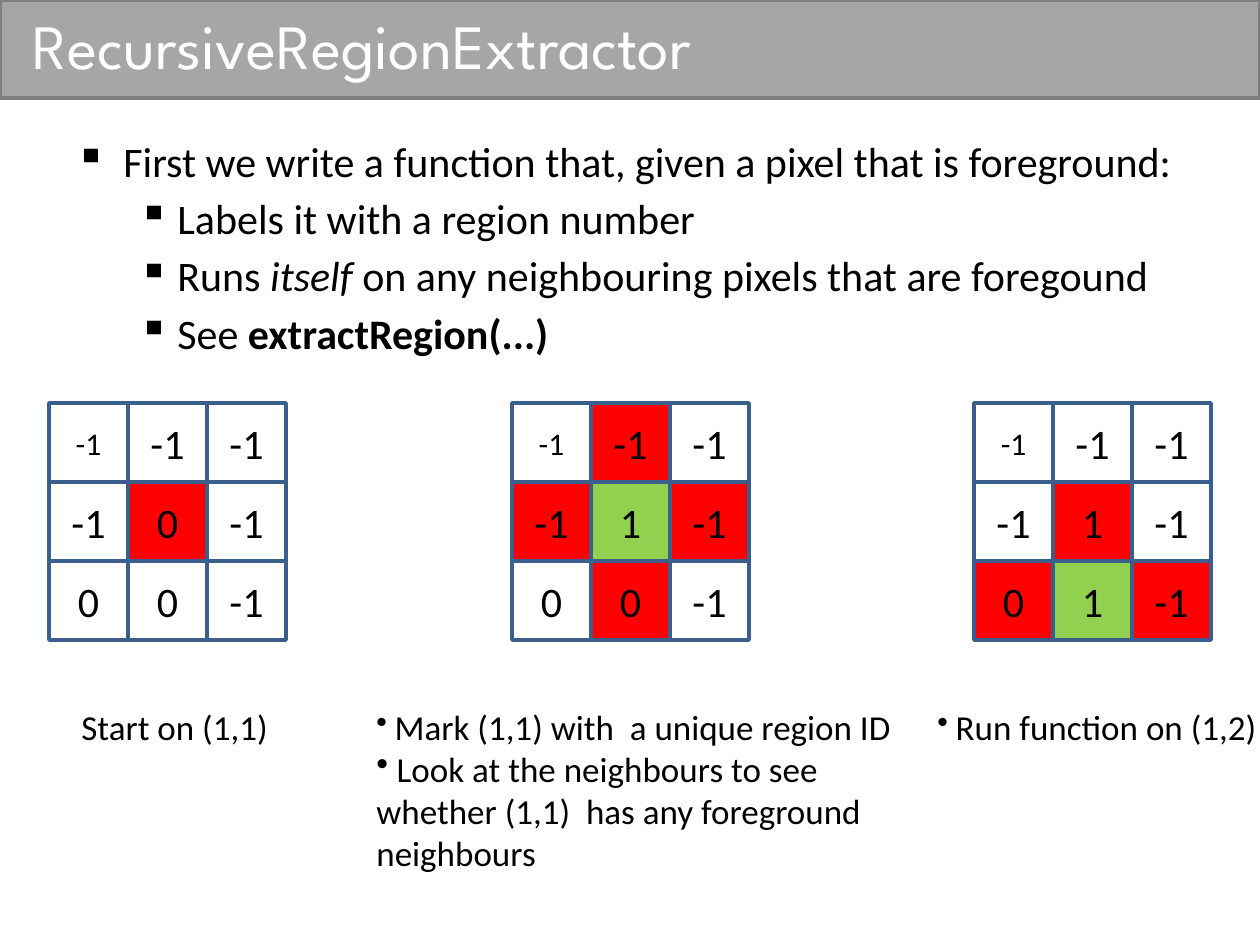
from dataclasses import dataclass

from lxml.etree import SubElement
from pptx import Presentation
from pptx.dml.color import RGBColor
from pptx.enum.shapes import MSO_SHAPE as Shape
from pptx.enum.text import MSO_ANCHOR as Anchor, PP_ALIGN as Align
from pptx.oxml.ns import qn
from pptx.util import Emu, Pt

PX = 914400 / 126
COLORS = {
    "bar": "A6A6A6", "bar_line": "808080", "title": "FFFFFF", "text": "000000",
    "cell_line": "3A5F8C", "R": "FF0000", "G": "92D050",
}
CELL = 79
GRID_TOP = 403
CAPTION_TOP = 699


@dataclass
class Span:
    text: str
    size: int = 0
    bold: bool = False
    italic: bool = False


@dataclass
class Line:
    spans: list[Span]
    bullet: str = ""
    level: int = 0
    margin: int = 0
    hang: int = 0
    before: float = 0


@dataclass
class Grid:
    """Nine pixel values and their marks: R red, G green, . unfilled."""
    left: int
    values: str
    marks: str


@dataclass
class Caption:
    left: int
    width: int
    height: int
    size: int
    lines: list[Line]
    wrap: bool = True


def px(*lengths: int) -> list[Emu]:
    return [Emu(round(length * PX)) for length in lengths]


def color(name: str) -> RGBColor:
    return RGBColor.from_string(COLORS[name])


def set_font(para, size: int, name: str = "Calibri", shade: str = "text") -> None:
    para.font.size = Pt(size)
    para.font.name = name
    para.font.color.rgb = color(shade)


def add_rect(page, area: tuple, line: str, fill: str = ""):
    rect = page.shapes.add_shape(Shape.RECTANGLE, *px(*area))
    rect.shadow.inherit = False
    if fill:
        rect.fill.solid()
        rect.fill.fore_color.rgb = color(fill)
    else:
        rect.fill.background()
    rect.line.color.rgb = color(line)
    rect.line.width = Pt(2)
    return rect


def add_title(page, text: str) -> None:
    title = page.shapes.title
    title.left, title.top, title.width, title.height = px(20, 0, 1201, 88)
    title.text_frame.text = text
    title.text_frame.vertical_anchor = Anchor.MIDDLE
    para = title.text_frame.paragraphs[0]
    para.alignment = Align.LEFT
    set_font(para, 36, "League Spartan", "title")
    bar = add_rect(page, (0, 0, 1260, 98), "bar_line", "bar")
    title._element.addprevious(bar._element)


def add_text(page, area: tuple, lines: list[Line], size: int, wrap: bool = True) -> None:
    box = page.shapes.add_textbox(*px(*area))
    frame = box.text_frame
    frame.word_wrap = wrap
    for index, line in enumerate(lines):
        para = frame.add_paragraph() if index else frame.paragraphs[0]
        para.level = line.level
        para.space_before = Pt(line.before)
        set_font(para, size)
        if line.bullet:
            margin, indent = px(line.margin, -line.hang)
            props = para._p.get_or_add_pPr()
            props.set("marL", str(margin))
            props.set("indent", str(indent))
            bullet = SubElement(props, qn("a:buChar"), char=line.bullet)
            props.find(qn("a:defRPr")).addprevious(bullet)
        for part in line.spans:
            span = para.add_run()
            span.text = part.text
            if part.size:
                span.font.size = Pt(part.size)
            if part.bold:
                span.font.bold = True
            if part.italic:
                span.font.italic = True


def add_grid(page, grid: Grid) -> None:
    for index, (value, mark) in enumerate(zip(grid.values.split(), grid.marks)):
        row, column = divmod(index, 3)
        area = (grid.left + column * CELL, GRID_TOP + row * CELL, CELL, CELL)
        cell = add_rect(page, area, "cell_line", mark.strip("."))
        frame = cell.text_frame
        frame.text = value
        frame.vertical_anchor = Anchor.MIDDLE
        para = frame.paragraphs[0]
        para.alignment = Align.CENTER
        set_font(para, 24 if index else 18)


def sub_point(*spans: Span) -> Line:
    return Line(list(spans), "▪", 1, 102, 39, 4)


POINTS = [
    Line([Span("First we write a function that, given a pixel that is foreground:")],
         "▪", 0, 48, 48, 4),
    sub_point(Span("Labels it with a region number")),
    sub_point(Span("Runs "), Span("itself ", italic=True),
              Span("on any neighbouring pixels that are foregound")),
    sub_point(Span("See "), Span("extractRegion(...)", bold=True)),
]
GRIDS = [
    Grid(49, "-1 -1 -1 -1 0 -1 0 0 -1", "....R...."),
    Grid(512, "-1 -1 -1 -1 1 -1 0 0 -1", ".R.RGR.R."),
    Grid(974, "-1 -1 -1 -1 1 -1 0 1 -1", "....R.RGR"),
]
CAPTIONS = [
    Caption(69, 214, 55, 20, [Line([Span("Start on (1,1)")])], wrap=False),
    Caption(364, 552, 183, 20, [
        Line([Span(" ", 18), Span("Mark (1,1) with  a unique region ID")], "•"),
        Line([Span(" Look at the neighbours to see whether (1,1)  has any "
                   "foreground neighbours")], "•"),
    ]),
    Caption(925, 501, 55, 20,
            [Line([Span(" ", 18), Span("Run function on (1,2)")], "•")]),
]


def main() -> None:
    deck = Presentation()
    deck.slide_width, deck.slide_height = px(1260, 945)
    page = deck.slides.add_slide(deck.slide_layouts[5])
    add_title(page, "RecursiveRegionExtractor")
    add_text(page, (63, 129, 1134, 759), POINTS, 24)
    for grid in GRIDS:
        add_grid(page, grid)
    for note in CAPTIONS:
        area = (note.left, CAPTION_TOP, note.width, note.height)
        add_text(page, area, note.lines, note.size, note.wrap)
    deck.save("out.pptx")


if __name__ == "__main__":
    main()
